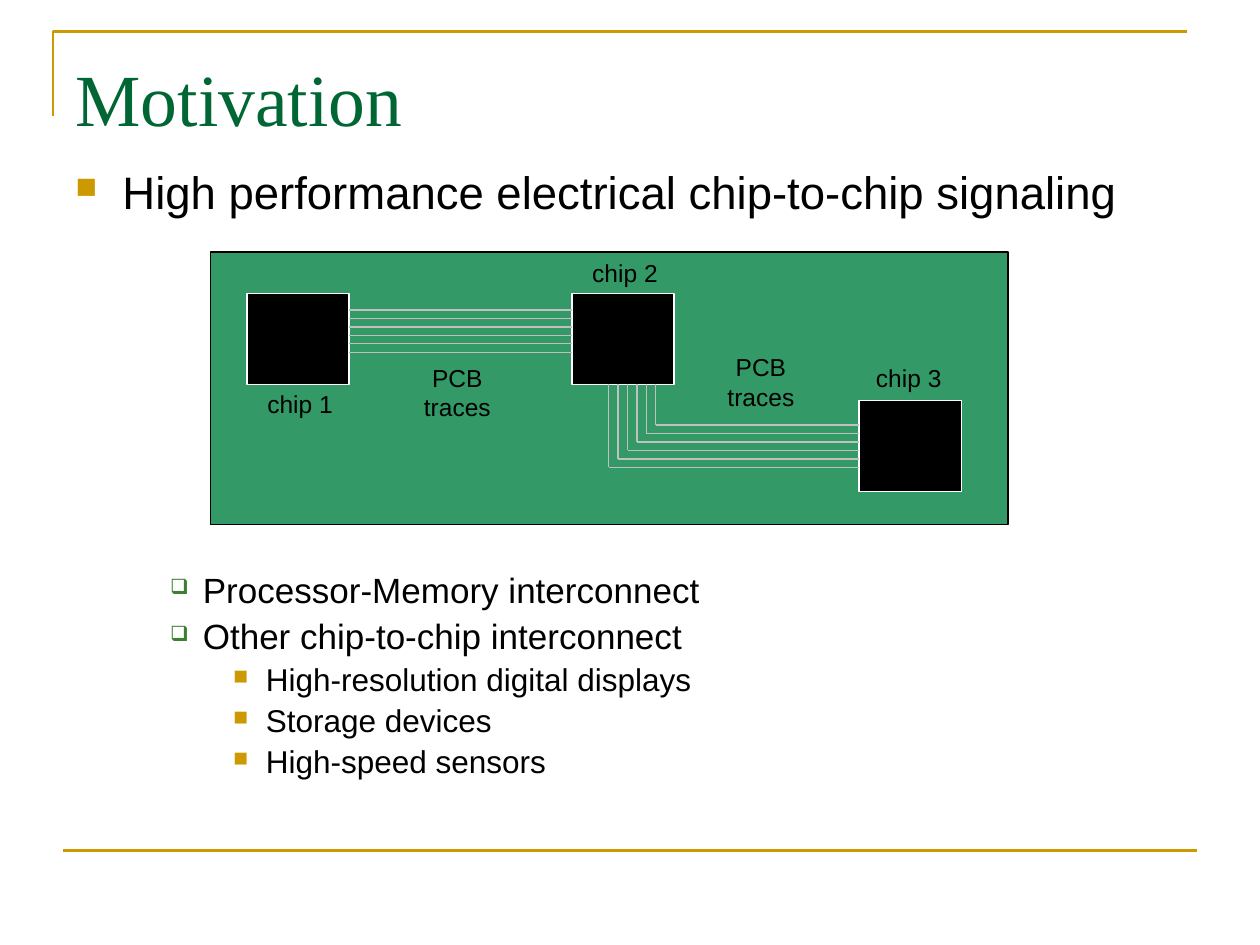
from lxml import etree
from pptx import Presentation
from pptx import util as u
from pptx.dml.color import RGBColor
from pptx.enum import shapes, text
from pptx.oxml import ns

HUE = {"gold": "CC9900", "title": "006633", "leaf": "3B812F", "board": "339966",
       "black": "000000", "white": "FFFFFF", "trace": "C0C0C0"}
SQUARE = {"char": "■", "hue": "gold", "size": 65}
BOX = {"char": "❑", "hue": "leaf", "size": 60}
HEAD = {"pt": 26, "gap": 3, "left": 0.95, "hang": 0.95, "lead": 1.0, "mark": SQUARE}
ITEM = {"pt": 20, "gap": 5, "left": 1.93, "hang": 0.66, "lead": 0.9, "mark": BOX}
PART = {"pt": 18, "gap": 4, "left": 3.2, "hang": 0.66, "lead": 0.9, "mark": SQUARE}


def rgb(name):
    return RGBColor.from_string(HUE[name])


def put(item, **vals):
    for key, val in vals.items():
        setattr(item, key, val)


def cms(*vals):
    return [u.Cm(val) for val in vals]


def pen(line, hue, width):
    line.color.rgb = rgb(hue)
    line.width = u.Pt(width)


def wire(slide, start, end, hue="trace", width=0.75):
    link = slide.shapes.add_connector(shapes.MSO_CONNECTOR.STRAIGHT, *cms(*start, *end))
    pen(link.line, hue, width)
    etree.SubElement(link._element.spPr, ns.qn("a:effectLst"))


def block(slide, box, fill, line):
    rect = slide.shapes.add_shape(shapes.MSO_SHAPE.RECTANGLE, *cms(*box))
    rect.shadow.inherit = False
    rect.fill.solid()
    rect.fill.fore_color.rgb = rgb(fill)
    pen(rect.line, line, 0.75)


def write(para, words, size, hue="black", face="Arial"):
    run = para.add_run()
    run.text = words
    put(run.font, size=u.Pt(size), name=face)
    run.font.color.rgb = rgb(hue)


def bullet(para, style):
    mark = style["mark"]
    props = para._p.get_or_add_pPr()
    props.set("marL", str(u.Cm(style["left"])))
    props.set("indent", str(-u.Cm(style["hang"])))
    tint = etree.SubElement(props, ns.qn("a:buClr"))
    etree.SubElement(tint, ns.qn("a:srgbClr"), val=HUE[mark["hue"]])
    etree.SubElement(props, ns.qn("a:buSzPct"), val=str(mark["size"] * 1000))
    etree.SubElement(props, ns.qn("a:buChar"), char=mark["char"])


def frame(slide, box):
    area = slide.shapes.add_textbox(*cms(*box)).text_frame
    area.word_wrap = True
    return area


def points(slide, box, rows):
    area = frame(slide, box)
    for num, (style, words) in enumerate(rows):
        para = area.add_paragraph() if num else area.paragraphs[0]
        gap = style["gap"] if num or style is HEAD else 1
        put(para, space_before=u.Pt(gap), line_spacing=style["lead"])
        bullet(para, style)
        write(para, words, style["pt"])


def label(slide, box, words):
    para = frame(slide, box).paragraphs[0]
    para.alignment = text.PP_ALIGN.CENTER
    write(para, words, 14)


def rules(slide, box):
    left, top, wide, high = box
    form = slide.shapes.build_freeform(*cms(left, top + 1.7))
    form.add_line_segments([cms(left, top), cms(left + wide, top)], close=False)
    edge = form.convert_to_shape()
    edge.shadow.inherit = False
    edge.fill.background()
    pen(edge.line, "gold", 1.5)
    foot = top + high
    wire(slide, (left + 0.2, foot), (left + 0.2 + wide, foot), "gold", 1.5)


def title(slide, box, words):
    head = slide.shapes.title
    put(head, **dict(zip(("left", "top", "width", "height"), cms(*box))))
    area = head.text_frame
    put(area, vertical_anchor=text.MSO_ANCHOR.TOP, margin_top=u.Cm(0.3),
        auto_size=text.MSO_AUTO_SIZE.NONE)
    para = area.paragraphs[0]
    para.alignment = text.PP_ALIGN.LEFT
    write(para, words, 42, "title", "Times New Roman")


def board(slide, box):
    left, top = box[:2]
    wide, high = 2.06, 1.83
    block(slide, box, "board", "black")
    chips = [(left + x, top + y) for x, y in ((0.74, 0.84), (7.29, 0.84), (13.08, 3.0))]
    for x, y in chips:
        block(slide, (x, y, wide, high), "black", "white")
    one, two, three = chips
    for num in range(6):
        y = one[1] + 0.33 + 0.17 * num
        wire(slide, (one[0] + wide, y), (two[0], y))
        bend = two[0] + 0.74 + 0.19 * num, three[1] + 1.34 - 0.17 * num
        wire(slide, (bend[0], two[1] + high), bend)
        wire(slide, bend, (three[0], bend[1]))
    for x, y, high, words in (
            (0.64, 2.64, 0.84, "chip 1"), (7.19, 0, 0.84, "chip 2"),
            (12.91, 2.11, 0.84, "chip 3"), (3.81, 2.11, 1.45, "PCB traces"),
            (9.93, 1.9, 1.45, "PCB traces")):
        label(slide, (left + x, top + y, 2.34, high), words)


def main():
    deck = Presentation()
    put(deck, slide_width=u.Cm(25.4), slide_height=u.Cm(19.05))
    slide = deck.slides.add_slide(deck.slide_layouts[5])
    rules(slide, (1.07, 0.64, 22.86, 16.51))
    title(slide, (1.27, 0.76, 22.86, 1.78), "Motivation")
    points(slide, (1.27, 3.18, 22.86, 8.89),
           [(HEAD, "High performance electrical chip-to-chip signaling")])
    points(slide, (1.91, 11.43, 20.52, 4.47), [
        (ITEM, "Processor-Memory interconnect"),
        (ITEM, "Other chip-to-chip interconnect"),
        (PART, "High-resolution digital displays"),
        (PART, "Storage devices"),
        (PART, "High-speed sensors")])
    board(slide, (4.24, 5.08, 16.08, 5.5))
    deck.save("out.pptx")


if __name__ == "__main__":
    main()
